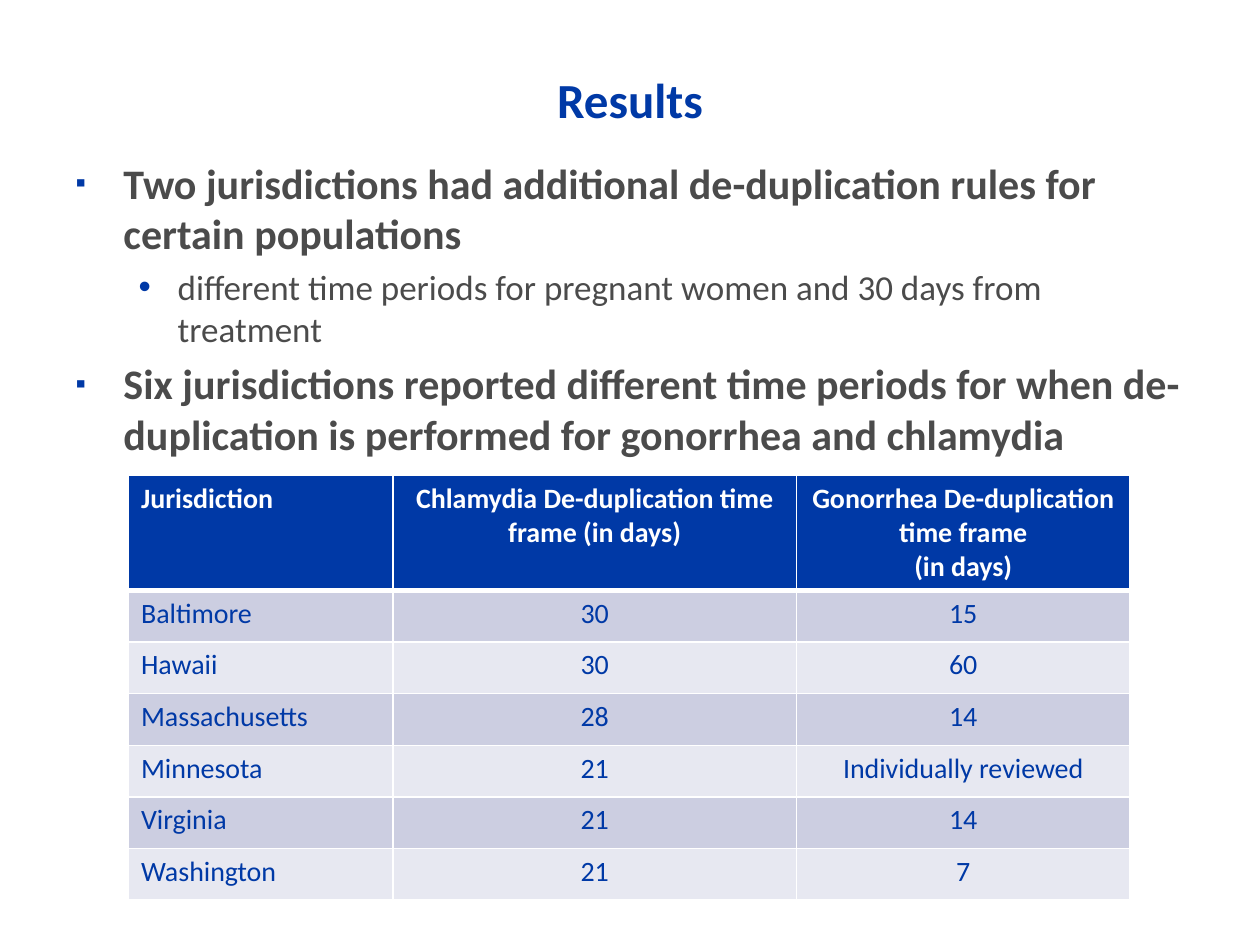
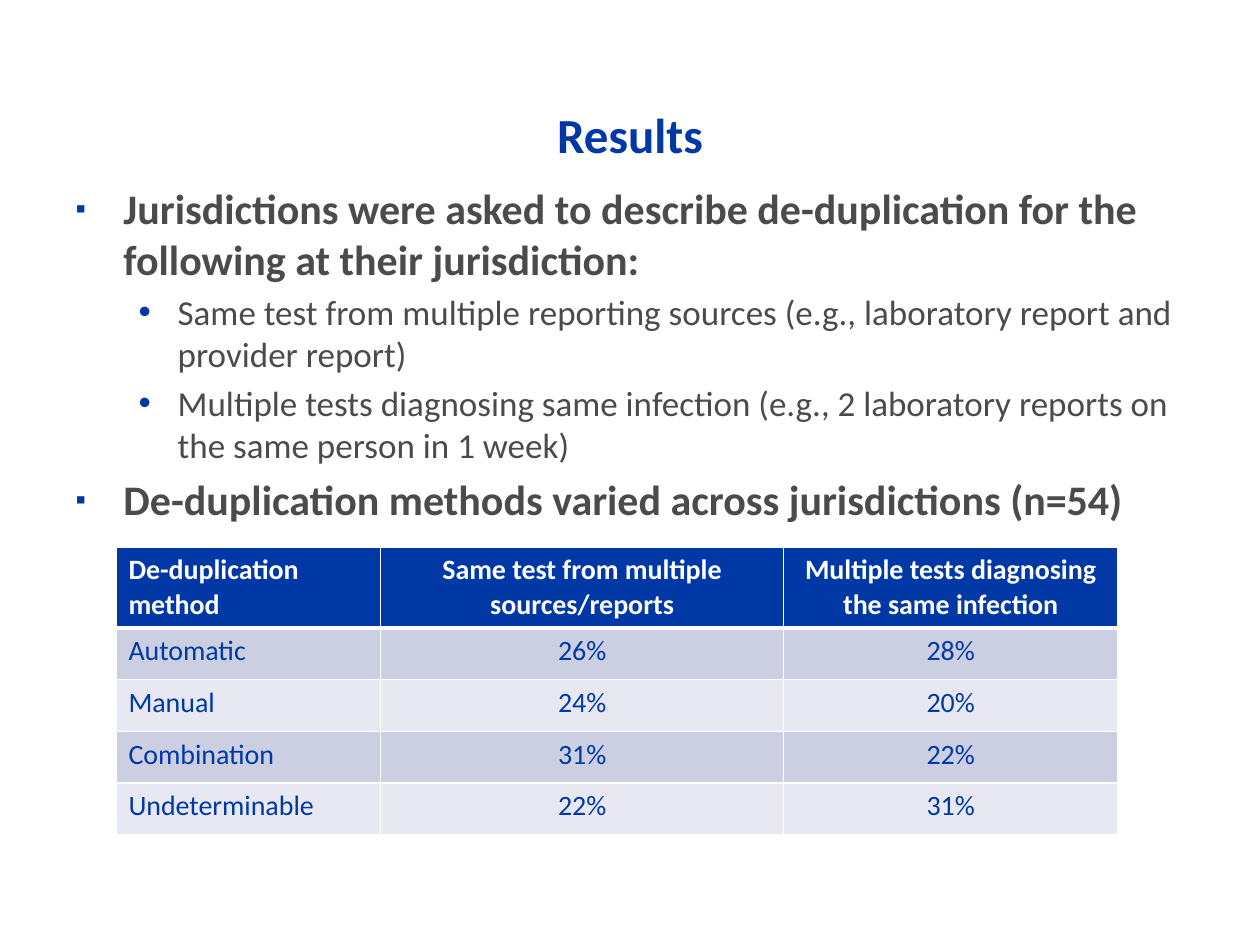
from dataclasses import dataclass

from lxml import etree
from pptx import Presentation
from pptx import util as u
from pptx.dml import color
from pptx.enum import text
from pptx.oxml import ns


@dataclass(frozen=True)
class Theme:
    font: str = "Calibri"
    blue: str = "0039A6"
    grey: str = "4B4B4B"
    white: str = "FFFFFF"
    bands: tuple = ("CCCEE1", "E7E8F1")
    title_size: int = 28
    title_leading: int = 30
    cell_size: int = 16
    rule: int = 1
    header_rule: int = 3


@dataclass(frozen=True)
class Level:
    size: int
    bold: bool
    bullet: str
    bullet_percent: int
    margin: float
    hanging: float


THEME = Theme()
LEVELS = (
    Level(24, True, "▪", 70, 0.38, 0.38),
    Level(20, False, "•", 100, 0.81, 0.31),
)
COLUMN_WIDTHS = (2.1, 3.2, 2.65)
ROW_HEIGHT = 0.41


def set_values(target, values):
    for name, value in values.items():
        setattr(target, name, value)


def place(shape, box):
    names = ("left", "top", "width", "height")
    set_values(shape, {name: u.Inches(size) for name, size in zip(names, box)})


def add_span(para, words, size, ink, bold):
    span = para.add_run()
    span.text = words
    set_values(span.font, {"name": THEME.font, "size": u.Pt(size), "bold": bold})
    span.font.color.rgb = color.RGBColor.from_string(ink)


def add_child(parent, tag, **attributes):
    child = etree.SubElement(parent, ns.qn(tag))
    for name, value in attributes.items():
        child.set(name, str(value))
    return child


def add_bullet(para, level):
    properties = para._p.get_or_add_pPr()
    properties.set("marL", str(u.Inches(level.margin)))
    properties.set("indent", str(-u.Inches(level.hanging)))
    add_child(add_child(properties, "a:buClr"), "a:srgbClr", val=THEME.blue)
    add_child(properties, "a:buSzPct", val=level.bullet_percent * 1000)
    add_child(properties, "a:buFont", typeface="Arial")
    add_child(properties, "a:buChar", char=level.bullet)


def fill_title(page, words, box):
    title = page.shapes.title
    place(title, box)
    set_values(title.text_frame, {
        "vertical_anchor": text.MSO_ANCHOR.BOTTOM,
        "auto_size": text.MSO_AUTO_SIZE.NONE,
    })
    para = title.text_frame.paragraphs[0]
    set_values(para, {
        "alignment": text.PP_ALIGN.CENTER,
        "line_spacing": u.Pt(THEME.title_leading),
    })
    add_span(para, words, THEME.title_size, THEME.blue, True)


def fill_body(page, items, box):
    body = page.placeholders[1]
    place(body, box)
    frame = body.text_frame
    frame.auto_size = text.MSO_AUTO_SIZE.NONE
    for index, (depth, words) in enumerate(items):
        para = frame.add_paragraph() if index else frame.paragraphs[0]
        level = LEVELS[depth]
        add_bullet(para, level)
        set_values(para, {
            "level": depth,
            "space_before": u.Pt(0.2 * level.size if index else 0),
        })
        add_span(para, words, level.size, THEME.grey, level.bold)


def add_borders(cell, top, bottom):
    properties = cell._tc.get_or_add_tcPr()
    widths = {"L": THEME.rule, "R": THEME.rule, "T": top, "B": bottom}
    for side, width in widths.items():
        line = add_child(properties, f"a:ln{side}", w=u.Pt(width))
        add_child(add_child(line, "a:solidFill"), "a:srgbClr", val=THEME.white)


def fill_cell(cell, words, row, column):
    header = row == 0
    add_borders(
        cell,
        THEME.header_rule if row == 1 else THEME.rule,
        THEME.header_rule if header else THEME.rule,
    )
    shade = THEME.blue if header else THEME.bands[(row - 1) % 2]
    cell.fill.solid()
    cell.fill.fore_color.rgb = color.RGBColor.from_string(shade)
    for index, line in enumerate(words.split("\n")):
        frame = cell.text_frame
        para = frame.add_paragraph() if index else frame.paragraphs[0]
        para.alignment = text.PP_ALIGN.CENTER if column else text.PP_ALIGN.LEFT
        ink = THEME.white if header else THEME.blue
        add_span(para, line, THEME.cell_size, ink, header)


def add_results_table(page, rows, left, top, header_height):
    heights = [header_height] + [ROW_HEIGHT] * (len(rows) - 1)
    box = (left, top, sum(COLUMN_WIDTHS), sum(heights))
    table = page.shapes.add_table(
        len(rows), len(COLUMN_WIDTHS), *map(u.Inches, box)
    ).table
    for column, width in zip(table.columns, COLUMN_WIDTHS):
        column.width = u.Inches(width)
    for row, height in zip(table.rows, heights):
        row.height = u.Inches(height)
    for row, values in enumerate(rows):
        for column, words in enumerate(values):
            fill_cell(table.cell(row, column), words, row, column)


def add_results_page(deck, title_top, body_top, items, rows, table_place):
    page = deck.slides.add_slide(deck.slide_layouts[1])
    fill_title(page, "Results", (0.5, title_top, 9, 1.25))
    fill_body(page, items, (0.5, body_top, 9, 4.58))
    add_results_table(page, rows, *table_place)


TIME_FRAME_ITEMS = (
    (0, "Two jurisdictions had additional de-duplication rules for certain populations"),
    (1, "different time periods for pregnant women and 30 days from treatment"),
    (0, "Six jurisdictions reported different time periods for when de-duplication "
        "is performed for gonorrhea and chlamydia"),
)
TIME_FRAME_ROWS = (
    ("Jurisdiction", "Chlamydia De-duplication time frame (in days)",
     "Gonorrhea De-duplication time frame\n(in days)"),
    ("Baltimore", "30", "15"),
    ("Hawaii", "30", "60"),
    ("Massachusetts", "28", "14"),
    ("Minnesota", "21", "Individually reviewed"),
    ("Virginia", "21", "14"),
    ("Washington", "21", "7"),
)
METHOD_ITEMS = (
    (0, "Jurisdictions were asked to describe de-duplication for the following "
        "at their jurisdiction:"),
    (1, "Same test from multiple reporting sources (e.g., laboratory report and "
        "provider report)"),
    (1, "Multiple tests diagnosing same infection (e.g., 2 laboratory reports on "
        "the same person in 1 week)"),
    (0, "De-duplication methods varied across jurisdictions (n=54)"),
)
METHOD_ROWS = (
    ("De-duplication method", "Same test from multiple sources/reports",
     "Multiple tests diagnosing the same infection"),
    ("Automatic", "26%", "28%"),
    ("Manual", "24%", "20%"),
    ("Combination", "31%", "22%"),
    ("Undeterminable", "22%", "31%"),
)


def main():
    deck = Presentation()
    set_values(deck, {"slide_width": u.Inches(10), "slide_height": u.Inches(7.5)})
    add_results_page(
        deck, -0.18, 1.2, TIME_FRAME_ITEMS, TIME_FRAME_ROWS, (1.02, 3.77, 0.91)
    )
    add_results_page(
        deck, 0.1, 1.4, METHOD_ITEMS, METHOD_ROWS, (0.92, 4.34, 0.64)
    )
    deck.save("out.pptx")


if __name__ == "__main__":
    main()
